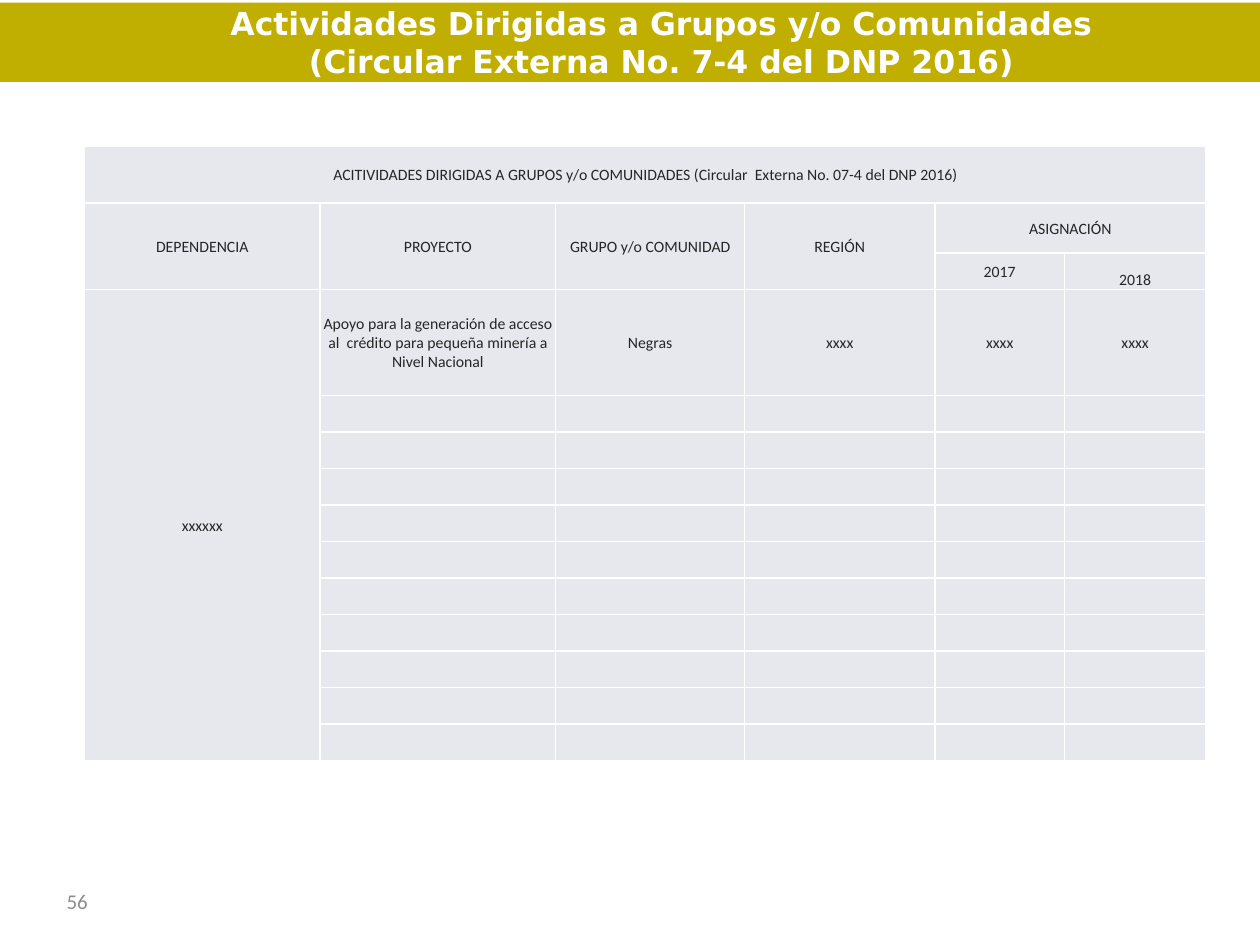
import pptx
import pptx.dml.color
import pptx.enum.text
import pptx.oxml.ns
import pptx.util
from lxml import etree
from pptx.util import Inches

GOLD = pptx.dml.color.RGBColor(0xC0, 0xAE, 0x00)
WHITE = pptx.dml.color.RGBColor(0xFF, 0xFF, 0xFF)
PALE = pptx.dml.color.RGBColor(0xE7, 0xE8, 0xEE)
DARK = pptx.dml.color.RGBColor(0x26, 0x26, 0x26)
GREY = pptx.dml.color.RGBColor(0x8E, 0x8E, 0x8E)

ANCHOR = pptx.enum.text.MSO_ANCHOR
ALIGN = pptx.enum.text.PP_ALIGN
qn = pptx.oxml.ns.qn

HEADING_FONT = {"name": "DejaVu Sans", "size": pptx.util.Pt(18), "bold": True}
CELL_FONT = {"name": "Calibri", "size": pptx.util.Pt(9)}
NUMBER_FONT = {"name": "Calibri", "size": pptx.util.Pt(12)}
CELL_FORMAT = {
    "margin_left": Inches(0.01),
    "margin_right": Inches(0.01),
    "margin_top": Inches(0.01),
    "margin_bottom": 0,
    "vertical_anchor": ANCHOR.MIDDLE,
}

COLUMN_WIDTHS = [1.87, 1.87, 1.5, 1.51, 1.03, 1.12]
ROW_HEIGHTS = [0.45, 0.4, 0.29, 0.84] + [0.29] * 10
MERGES = [(0, 0, 0, 5), (1, 4, 1, 5), (3, 0, 13, 0)] + [
    (1, column, 2, column) for column in range(4)
]
CONTENT = [
    ["ACITIVIDADES DIRIGIDAS A GRUPOS y/o COMUNIDADES (Circular  Externa No. 07-4 del DNP 2016)"],
    ["DEPENDENCIA", "PROYECTO", "GRUPO y/o COMUNIDAD", "REGIÓN", "ASIGNACIÓN"],
    ["", "", "", "", "2017", "2018"],
    [
        "xxxxxx",
        "Apoyo para la generación de acceso al  crédito para pequeña minería a Nivel Nacional",
        "Negras",
        "xxxx",
        "xxxx",
        "xxxx",
    ],
]


def apply_format(target, values):
    for attribute, value in values.items():
        setattr(target, attribute, value)


def place(shape, box):
    apply_format(shape, dict(zip(("left", "top", "width", "height"), box)))


def write(paragraph, text, font, color, alignment):
    paragraph.alignment = alignment
    paragraph.text = text
    for run in paragraph.runs:
        apply_format(run.font, font)
        run.font.color.rgb = color


def add_heading(slide, box):
    heading = slide.shapes.title
    place(heading, box)
    heading.fill.solid()
    heading.fill.fore_color.rgb = GOLD
    frame = heading.text_frame
    apply_format(frame, {
        "word_wrap": True,
        "vertical_anchor": ANCHOR.MIDDLE,
        "auto_size": pptx.enum.text.MSO_AUTO_SIZE.NONE,
    })
    text = "Actividades Dirigidas a Grupos y/o Comunidades\v(Circular Externa No. 7-4 del DNP 2016)"
    write(frame.paragraphs[0], text, HEADING_FONT, WHITE, ALIGN.CENTER)
    frame.paragraphs[0]._p.get_or_add_pPr().set("marL", str(Inches(0.5)))


def add_borders(cell):
    properties = cell._tc.get_or_add_tcPr()
    for side in ("lnL", "lnR", "lnT", "lnB"):
        line = etree.SubElement(properties, qn(f"a:{side}"), w=str(pptx.util.Pt(1)))
        fill = etree.SubElement(line, qn("a:solidFill"))
        etree.SubElement(fill, qn("a:srgbClr"), val=str(WHITE))


def format_cell(cell, text):
    apply_format(cell, CELL_FORMAT)
    add_borders(cell)
    cell.fill.solid()
    cell.fill.fore_color.rgb = PALE
    paragraph = cell.text_frame.paragraphs[0]
    write(paragraph, text, CELL_FONT, DARK, ALIGN.CENTER)
    etree.SubElement(paragraph._p, qn("a:endParaRPr"), sz="900")


def add_activities(slide, box):
    activities = slide.shapes.add_table(len(ROW_HEIGHTS), len(COLUMN_WIDTHS), *box).table
    for column, width in zip(activities.columns, COLUMN_WIDTHS):
        column.width = Inches(width)
    for row, height in zip(activities.rows, ROW_HEIGHTS):
        row.height = Inches(height)
    for top, left, bottom, right in MERGES:
        activities.cell(top, left).merge(activities.cell(bottom, right))
    for row_index in range(len(ROW_HEIGHTS)):
        texts = CONTENT[row_index] if row_index < len(CONTENT) else []
        for column_index in range(len(COLUMN_WIDTHS)):
            text = texts[column_index] if column_index < len(texts) else ""
            format_cell(activities.cell(row_index, column_index), text)
    activities.cell(2, 5).vertical_anchor = ANCHOR.BOTTOM


def add_page_number(slide, box):
    frame = slide.shapes.add_textbox(*box).text_frame
    apply_format(frame, {"word_wrap": True, "vertical_anchor": ANCHOR.MIDDLE})
    write(frame.paragraphs[0], "56", NUMBER_FONT, GREY, ALIGN.LEFT)


def main():
    presentation = pptx.Presentation()
    apply_format(presentation, {"slide_width": Inches(10), "slide_height": Inches(7.5)})
    slide = presentation.slides.add_slide(presentation.slide_layouts[5])
    add_page_number(slide, (Inches(0.43), Inches(6.95), Inches(2.33), Inches(0.4)))
    add_heading(slide, (0, Inches(0.02), Inches(10), Inches(0.63)))
    add_activities(slide, (Inches(0.67), Inches(1.16), Inches(8.9), Inches(4.88)))
    presentation.save("out.pptx")


if __name__ == "__main__":
    main()
